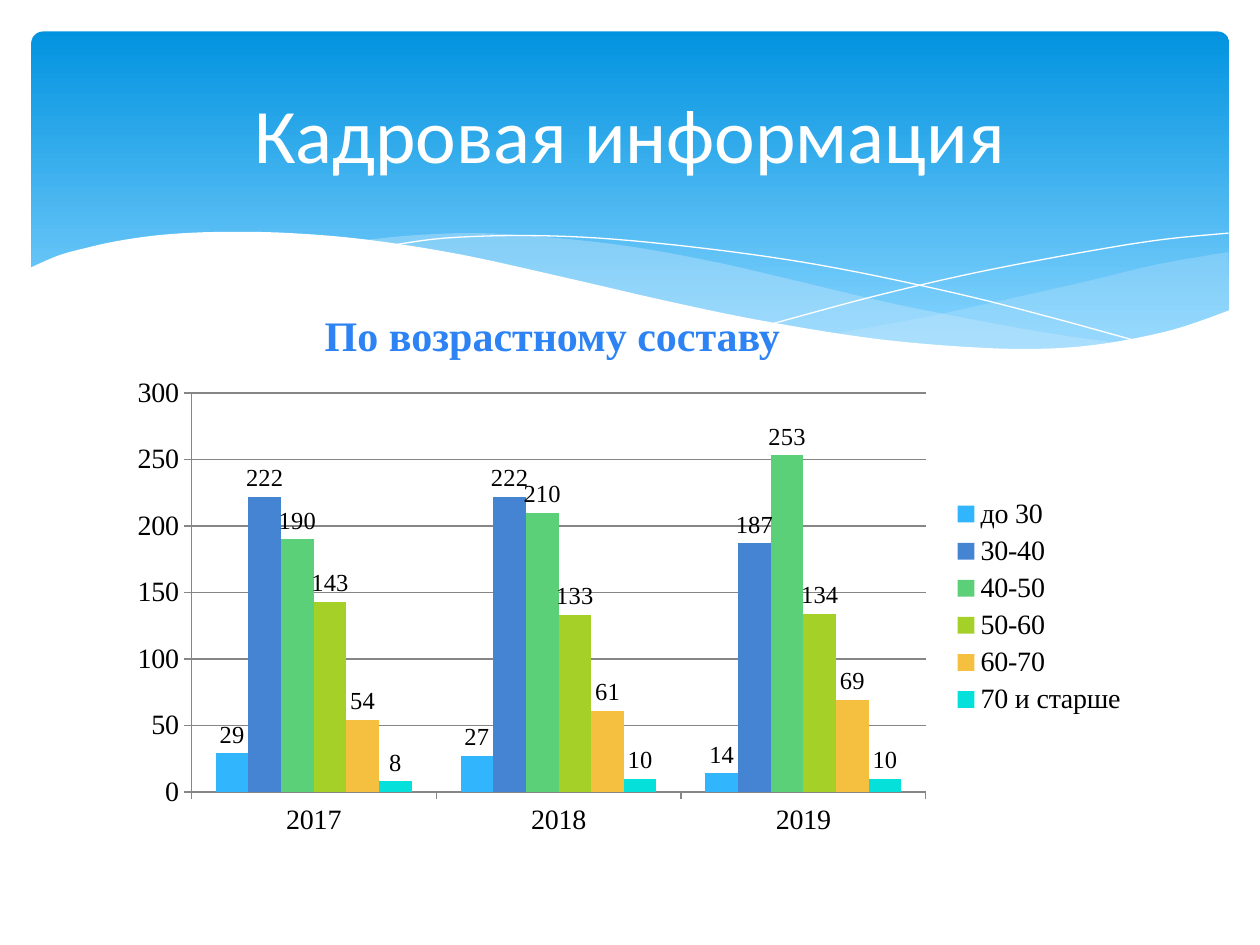
from lxml import etree
from pptx import Presentation
from pptx.chart.data import CategoryChartData
from pptx.dml.color import RGBColor
from pptx.enum.chart import XL_CHART_TYPE, XL_LABEL_POSITION, XL_LEGEND_POSITION, XL_TICK_MARK
from pptx.enum.shapes import MSO_SHAPE
from pptx.enum.text import MSO_ANCHOR, PP_ALIGN
from pptx.oxml.ns import qn
from pptx.util import Pt

COLUMNS = XL_CHART_TYPE.COLUMN_CLUSTERED
OUTSIDE = XL_LABEL_POSITION.OUTSIDE_END
RIGHT = XL_LEGEND_POSITION.RIGHT
TICK_OUT = XL_TICK_MARK.OUTSIDE
TICK_NONE = XL_TICK_MARK.NONE
ROUNDED = MSO_SHAPE.ROUNDED_RECTANGLE
TOP, MIDDLE = MSO_ANCHOR.TOP, MSO_ANCHOR.MIDDLE
LEFT, CENTER = PP_ALIGN.LEFT, PP_ALIGN.CENTER

SANS, SERIF = "Calibri", "Times New Roman"
COLORS = {
    "white": "FFFFFF", "black": "000000", "grid": "868686", "heading": "2D83F4",
    "sky": "0293E0", "horizon": "83D3FE", "mist": "C6E7FC",
    "до 30": "31B6FD", "30-40": "4584D3", "40-50": "5BD078",
    "50-60": "A5D028", "60-70": "F5C040", "70 и старше": "05E0DB",
}
YEARS = ["2017", "2018", "2019"]
STAFF_BY_AGE = {
    "до 30": (29, 27, 14), "30-40": (222, 222, 187), "40-50": (190, 210, 253),
    "50-60": (143, 133, 134), "60-70": (54, 61, 69), "70 и старше": (8, 10, 10),
}

RIGHT_SWELL = [(702, 144), (662, 151), (620, 161), (560, 174.5), (525, 182), (476, 191)]
RIGHT_TROUGH = [(476, 191), (517, 196), (562, 199.5), (608, 199.5), (646, 195.5),
                (678, 187), (702.5, 178)]
MIDDLE_CREST = [(643, 196.5), (603, 191), (558, 183), (508, 173), (453, 160), (410, 150),
                (361, 141), (318, 136), (274, 133.2), (236, 134.5), (206, 137.5)]
MIDDLE_TROUGH = [(206, 137.5), (246, 143.5), (290, 152), (353, 167), (420, 181), (479, 191.5),
                 (539, 198), (589, 200), (624, 198.7), (643, 196.5)]
FALLING_LINE = [(222.5, 140.4), (254, 136.1), (300, 134.6), (352, 136.8), (419, 144),
                (479, 153.4), (547, 167.8), (598, 180.7), (653, 195.8)]
RISING_LINE = [(441.4, 185), (500, 169.2), (559, 155.5), (623.5, 143.3), (665, 136.8),
               (702, 133.2)]
WHITE_WAVE = [(703.5, 177), (670, 188.5), (630, 196.5), (592.5, 199.4), (548, 198),
              (495.5, 193), (434, 183), (381, 172), (322, 158.4), (263, 145.4), (210, 137),
              (165.5, 133.2), (127.5, 132.5), (95, 134), (68.5, 137.5), (48, 142),
              (33, 146.2), (16.5, 153.4)]


def color(name):
    """Return the named colour."""
    return RGBColor.from_string(COLORS[name])


def smooth(knots, steps=6):
    """Return points on a Catmull-Rom curve through the knots."""
    padded = [knots[0], *knots, knots[-1]]
    points = []
    for a, b, c, d in zip(padded, padded[1:], padded[2:], padded[3:]):
        for step in range(steps):
            t = step / steps
            points.append(tuple(
                q + t / 2 * (r - p + t * (2 * p - 5 * q + 4 * r - s + t * (3 * (q - r) + s - p)))
                for p, q, r, s in zip(a, b, c, d)))
    return points + [knots[-1]]


def set_font(font, size, face=SERIF, ink="black", bold=False):
    """Apply the character format."""
    font.size, font.name, font.bold = Pt(size), face, bold
    font.color.rgb = color(ink)


def write(frame, text, align=LEFT, anchor=TOP, **style):
    """Put one formatted paragraph into a text frame."""
    frame.word_wrap = True
    frame.vertical_anchor = anchor
    paragraph = frame.paragraphs[0]
    paragraph.alignment = align
    run = paragraph.add_run()
    run.text = text
    set_font(run.font, **style)


class Deck:
    """Holds the presentation and the slide being built."""

    def __init__(self):
        self.presentation = Presentation()
        self.presentation.slide_width, self.presentation.slide_height = Pt(720), Pt(540)
        self.slide = self.presentation.slides.add_slide(self.presentation.slide_layouts[6])

    def banner(self, *box):
        """Draw the rounded gradient banner."""
        banner = self.slide.shapes.add_shape(ROUNDED, *map(Pt, box))
        banner.shadow.inherit = False
        banner.adjustments[0] = 0.034
        banner.line.fill.background()
        banner.fill.gradient()
        banner.fill.gradient_angle = 270
        for stop, position, name in zip(banner.fill.gradient_stops, (0, 0.9), ("sky", "horizon")):
            stop.position = position
            stop.color.rgb = color(name)

    def outline(self, points, closed):
        """Build a freeform through the points."""
        start, *rest = [(Pt(x), Pt(y)) for x, y in points]
        builder = self.slide.shapes.build_freeform(*start)
        builder.add_line_segments(rest, close=closed)
        shape = builder.convert_to_shape()
        shape.shadow.inherit = False
        return shape

    def wave(self, points, fill, opacity=100):
        """Draw a filled wave."""
        wave = self.outline(points, True)
        wave.line.fill.background()
        wave.fill.solid()
        wave.fill.fore_color.rgb = color(fill)
        if opacity < 100:
            tint = wave.fill._xPr.find(".//" + qn("a:srgbClr"))
            etree.SubElement(tint, qn("a:alpha"), val=str(opacity * 1000))

    def hairline(self, knots, ink):
        """Draw a thin open curve."""
        hairline = self.outline(smooth(knots), False)
        hairline.fill.background()
        hairline.line.width = Pt(0)
        hairline.line.color.rgb = color(ink)

    def text(self, text, *box, **style):
        """Add a text box."""
        write(self.slide.shapes.add_textbox(*map(Pt, box)).text_frame, text, **style)

    def column_chart(self, categories, table, *box):
        """Add a clustered column chart with a legend and value labels."""
        data = CategoryChartData()
        data.categories = categories
        for name, values in table.items():
            data.add_series(name, values)
        chart = self.slide.shapes.add_chart(COLUMNS, *map(Pt, box), data).chart
        set_font(chart.font, 18, SANS)
        chart.has_title = False
        chart.has_legend = True
        chart.legend.position = RIGHT
        chart.legend.include_in_layout = False
        set_font(chart.legend.font, 16)
        for axis in (chart.category_axis, chart.value_axis):
            set_font(axis.tick_labels.font, 16)
            axis.major_tick_mark, axis.minor_tick_mark = TICK_OUT, TICK_NONE
            axis.format.line.color.rgb = color("grid")
        chart.value_axis.minimum_scale, chart.value_axis.maximum_scale = 0, 300
        chart.value_axis.major_unit = 50
        chart.value_axis.major_gridlines.format.line.color.rgb = color("grid")
        plot = chart.plots[0]
        plot.gap_width, plot.overlap, plot.vary_by_categories = 150, 0, False
        for series in plot.series:
            series.format.fill.solid()
            series.format.fill.fore_color.rgb = color(series.name)
            labels = series.data_labels
            labels.show_value, labels.position = True, OUTSIDE
            set_font(labels.font, 14)
        self.place_plot(chart, x=0.07, y=0.05, w=0.72, h=0.84)

    def place_plot(self, chart, **fractions):
        """Fix the inner plot area as fractions of the chart."""
        area = chart._chartSpace.find(".//" + qn("c:plotArea"))
        for layout in area.findall(qn("c:layout")):
            area.remove(layout)
        layout = etree.Element(qn("c:layout"))
        area.insert(0, layout)
        manual = etree.SubElement(layout, qn("c:manualLayout"))
        settings = {"layoutTarget": "inner", "xMode": "edge", "yMode": "edge", **fractions}
        for tag, value in settings.items():
            etree.SubElement(manual, qn("c:" + tag), val=str(value))


def main():
    """Build the slide and save it."""
    deck = Deck()
    deck.banner(18, 18, 684.5, 194.5)
    deck.wave(smooth(RIGHT_SWELL) + smooth(RIGHT_TROUGH), "mist", 29)
    deck.wave(smooth(MIDDLE_CREST) + smooth(MIDDLE_TROUGH), "mist", 40)
    for knots in (FALLING_LINE, RISING_LINE):
        deck.hairline(knots, "white")
    deck.wave(smooth(WHITE_WAVE) + [(16.5, 237), (703.5, 237)], "white")
    deck.column_chart(YEARS, STAFF_BY_AGE, 68.5, 211, 583, 271.5)
    deck.text("Кадровая информация", 36, 26.5, 648, 98.5, align=CENTER, anchor=MIDDLE,
              size=44, face=SANS, ink="white")
    deck.text("По возрастному составу", 178.5, 173.5, 335, 36, size=24, ink="heading", bold=True)
    deck.presentation.save("out.pptx")


if __name__ == "__main__":
    main()
